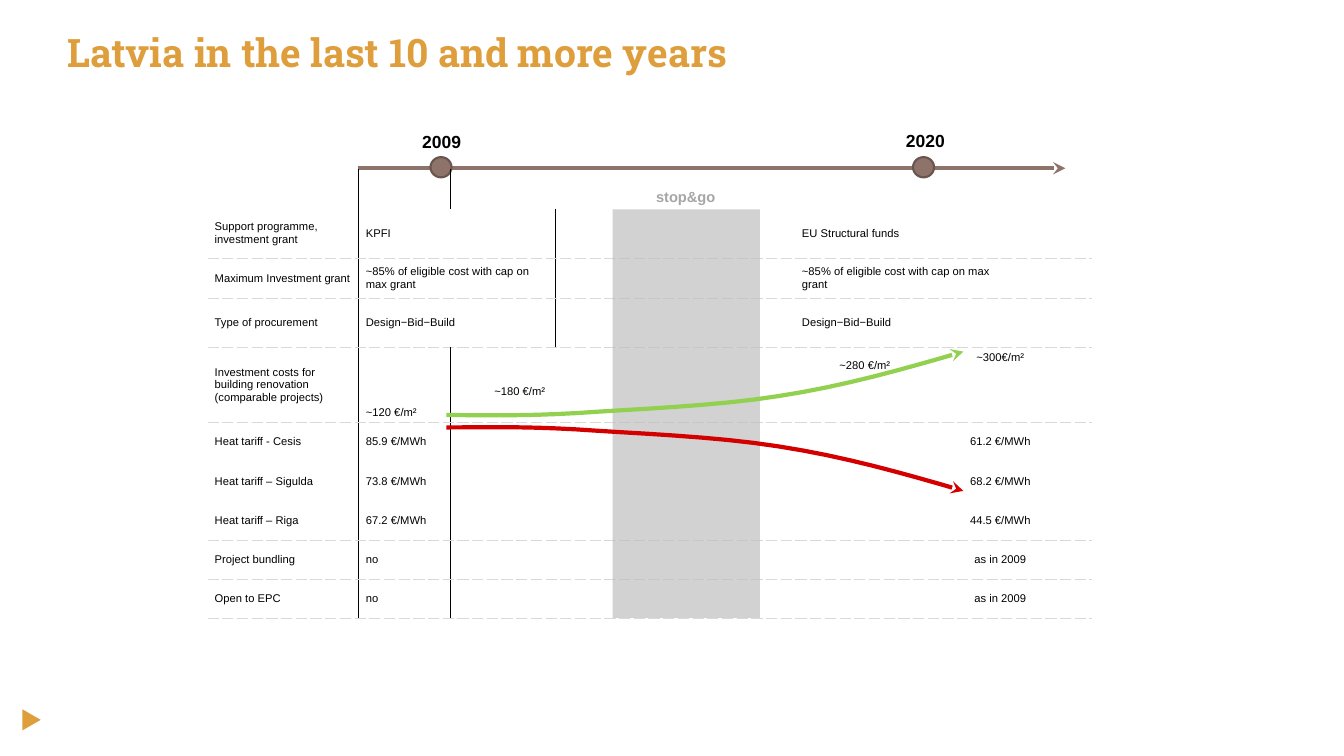
"""Builds a timeline slide of building renovation in Latvia."""
from dataclasses import dataclass
from typing import NamedTuple

from lxml.etree import SubElement
from pptx import Presentation
from pptx.dml.color import RGBColor
from pptx.enum.shapes import MSO_CONNECTOR, MSO_SHAPE
from pptx.enum.text import MSO_ANCHOR, MSO_AUTO_SIZE, PP_ALIGN
from pptx.oxml import parse_xml
from pptx.oxml.ns import nsdecls, qn
from pptx.util import Cm, Pt


@dataclass(frozen=True)
class Theme:
    gold: str = "DE9E3C"
    brown: str = "8E736A"
    rim: str = "69554E"
    ink: str = "000000"
    rule: str = "D9D9D9"
    band: str = "BFBFBF"
    note: str = "A6A6A6"
    red: str = "D40000"
    green: str = "92D050"
    head: str = "Roboto Slab"
    body: str = "Arial"
    title: float = 28
    year: float = 12.5
    pause: float = 10.5
    cell: float = 8


class Box(NamedTuple):
    left: float
    top: float
    width: float
    height: float

    def size(self) -> list:
        return [Cm(part) for part in self]


class Year(NamedTuple):
    text: str
    dot: float
    label: Box


@dataclass(frozen=True)
class Entry:
    row: int
    col: int
    text: str
    span: int = 1
    align: PP_ALIGN = PP_ALIGN.LEFT
    anchor: MSO_ANCHOR = MSO_ANCHOR.MIDDLE
    left: float = 0.18
    top: float = 0.08
    right: float = 0.18


THEME = Theme()
COLS = [3.81, 2.31, 2.64, 1.98, 2.31, 1.75, 2.87, 2.31, 2.31]
ROWS = [0.99, 1.24, 1.02, 1.24, 1.88] + [0.99] * 5
RULED = {1, 2, 3, 4, 7, 8, 9}
AXIS = 4.24
YEARS = [Year("2009", 10.85, Box(10.39, 3.18, 1.5, 0.79)),
         Year("2020", 23.01, Box(22.58, 3.15, 1.5, 0.79))]
NAMES = ["Support programme, investment grant", "Maximum Investment grant",
         "Type of procurement",
         "Investment costs for building renovation (comparable projects)",
         "Heat tariff - Cesis", "Heat tariff – Sigulda", "Heat tariff – Riga",
         "Project bundling", "Open to EPC"]
CAP = "~85% of eligible cost with cap on max grant"
GRANTS = [("KPFI", "EU Structural funds"), (CAP, CAP),
          ("Design−Bid−Build", "Design−Bid−Build")]
RATES = [("85.9 €/MWh", "61.2 €/MWh"), ("73.8 €/MWh", "68.2 €/MWh"),
         ("67.2 €/MWh", "44.5 €/MWh"), ("no", "as in 2009"), ("no", "as in 2009")]
COSTS = [Entry(4, 1, "~120 €/m²", anchor=MSO_ANCHOR.BOTTOM),
         Entry(4, 2, "~180 €/m²", align=PP_ALIGN.RIGHT, top=0.4, right=0.25),
         Entry(4, 6, "~280 €/m²", align=PP_ALIGN.CENTER,
               anchor=MSO_ANCHOR.TOP, left=0.84, top=0.3),
         Entry(4, 7, "~300€/m²", 2, PP_ALIGN.CENTER, MSO_ANCHOR.TOP)]
RISE = [(11.25, 10.46), (12.19, 10.46), (13.13, 10.49), (14.53, 10.41),
        (15.93, 10.31), (18.01, 10.24), (19.63, 9.98), (21.26, 9.73),
        (22.78, 9.3), (24.28, 8.86)]
MIRROR = 21.23
STEPS = 8


def write(frame, text: str, size: float, color: str, bold: bool = True,
          align: PP_ALIGN = PP_ALIGN.LEFT, font: str = THEME.body) -> None:
    para = frame.paragraphs[0]
    para.alignment = align
    run = para.add_run()
    run.text = text
    run.font.name, run.font.size, run.font.bold = font, Pt(size), bold
    run.font.color.rgb = RGBColor.from_string(color)


def label(slide, box: Box, text: str, size: float, color: str, wrap: bool,
          align: PP_ALIGN) -> None:
    frame = slide.shapes.add_textbox(*box.size()).text_frame
    frame.word_wrap = wrap
    write(frame, text, size, color, align=align)


def solid(slide, kind: MSO_SHAPE, box: Box, color: str, rim: str = ""):
    shape = slide.shapes.add_shape(kind, *box.size())
    shape.shadow.inherit = False
    shape.fill.solid()
    shape.fill.fore_color.rgb = RGBColor.from_string(color)
    if rim:
        shape.line.color.rgb = RGBColor.from_string(rim)
        shape.line.width = Pt(1.5)
    else:
        shape.line.fill.background()
    return shape


def arrow(shape, color: str) -> None:
    shape.line.color.rgb = RGBColor.from_string(color)
    shape.line.width = Pt(3)
    SubElement(shape.line._get_or_add_ln(), qn("a:tailEnd"), type="stealth")


def bend(points: list) -> list:
    path = points[:1]
    for at in range(0, len(points) - 1, 3):
        for step in range(1, STEPS + 1):
            t = step / STEPS
            mix = [(1 - t) ** 3, 3 * t * (1 - t) ** 2, 3 * t * t * (1 - t), t ** 3]
            path.append(tuple(sum(m * p[axis] for m, p in zip(mix, points[at:at + 4]))
                              for axis in (0, 1)))
    return path


def curve(slide, points: list, color: str) -> None:
    path = [(Cm(x), Cm(y)) for x, y in bend(points)]
    pen = slide.shapes.build_freeform(*path[0], scale=1.0)
    pen.add_line_segments(path[1:], close=False)
    shape = pen.convert_to_shape()
    shape.shadow.inherit = False
    shape.fill.background()
    arrow(shape, color)


def border(cell, side: str, color: str, width: float, dash: str) -> None:
    cell._tc.get_or_add_tcPr().insert(0, parse_xml(
        f'<a:{side} {nsdecls("a")} w="{Pt(width)}"><a:solidFill><a:srgbClr val="{color}"/>'
        f'</a:solidFill><a:prstDash val="{dash}"/></a:{side}>'))


def fill(table, entry: Entry) -> None:
    cell = table.cell(entry.row, entry.col)
    if entry.span > 1:
        cell.merge(table.cell(entry.row, entry.col + entry.span - 1))
    cell.vertical_anchor = entry.anchor
    cell.margin_left, cell.margin_right = Cm(entry.left), Cm(entry.right)
    cell.margin_top = Cm(entry.top)
    write(cell.text_frame, entry.text, THEME.cell, THEME.ink, False, entry.align)


def grid(slide) -> None:
    box = Box(5.23, 4.27, sum(COLS), sum(ROWS))
    table = slide.shapes.add_table(len(ROWS), len(COLS), *box.size()).table
    table.first_row = table.horz_banding = False
    style = table._tbl.tblPr.find(qn("a:tableStyleId"))
    style.text = "{2D5ABB26-0587-4C30-8999-92F81FD0307C}"
    for col, width in zip(table.columns, COLS):
        col.width = Cm(width)
    for at, (row, height) in enumerate(zip(table.rows, ROWS)):
        row.height = Cm(height)
        for col, cell in enumerate(row.cells):
            cell.fill.background()
            cell.margin_top = cell.margin_bottom = Cm(0.08)
            if at in RULED:
                border(cell, "lnB", THEME.rule, 0.5, "sysDash")
            if col == 0:
                border(cell, "lnR", THEME.ink, 1, "solid")
            elif col == 1:
                border(cell, "lnL", THEME.ink, 1, "solid")
    items = [Entry(row, 0, name) for row, name in enumerate(NAMES, 1)] + COSTS
    for row, (old, new) in enumerate(GRANTS, 1):
        items += [Entry(row, 1, old, 2), Entry(row, 6, new, 2)]
    for row, (old, new) in enumerate(RATES, 5):
        items += [Entry(row, 1, old), Entry(row, 7, new, 2, PP_ALIGN.CENTER)]
    for item in items:
        fill(table, item)


def main() -> None:
    deck = Presentation()
    deck.slide_width, deck.slide_height = Cm(33.87), Cm(19.05)
    slide = deck.slides.add_slide(deck.slide_layouts[5])
    title = slide.shapes.title
    title.left, title.top, title.width, title.height = Box(1.45, 0.51, 30.48, 1.52).size()
    title.text_frame.auto_size = MSO_AUTO_SIZE.NONE
    title.text_frame.vertical_anchor = MSO_ANCHOR.BOTTOM
    write(title.text_frame, "Latvia in the last 10 and more years", THEME.title,
          THEME.gold, font=THEME.head)
    mark = solid(slide, MSO_SHAPE.ISOSCELES_TRIANGLE, Box(0.53, 17.91, 0.53, 0.46), THEME.gold)
    mark.rotation = 90
    axis = slide.shapes.add_connector(MSO_CONNECTOR.STRAIGHT, Cm(9.02), Cm(AXIS),
                                      Cm(26.85), Cm(AXIS))
    arrow(axis, THEME.brown)
    SubElement(axis._element.spPr, qn("a:effectLst"))
    for year in YEARS:
        solid(slide, MSO_SHAPE.OVAL, Box(year.dot, 3.96, 0.53, 0.51), THEME.brown, THEME.rim)
        label(slide, year.label, year.text, THEME.year, THEME.ink, False, PP_ALIGN.LEFT)
    grid(slide)
    band = solid(slide, MSO_SHAPE.RECTANGLE, Box(15.44, 5.28, 3.71, 10.29), THEME.band)
    SubElement(band._element.spPr.find(".//" + qn("a:srgbClr")), qn("a:alpha"), val="70000")
    curve(slide, [(x, MIRROR - y) for x, y in RISE], THEME.red)
    curve(slide, RISE, THEME.green)
    label(slide, Box(15.44, 4.6, 3.68, 0.74), "stop&go", THEME.pause, THEME.note,
          True, PP_ALIGN.CENTER)
    deck.save("out.pptx")


if __name__ == "__main__":
    main()
